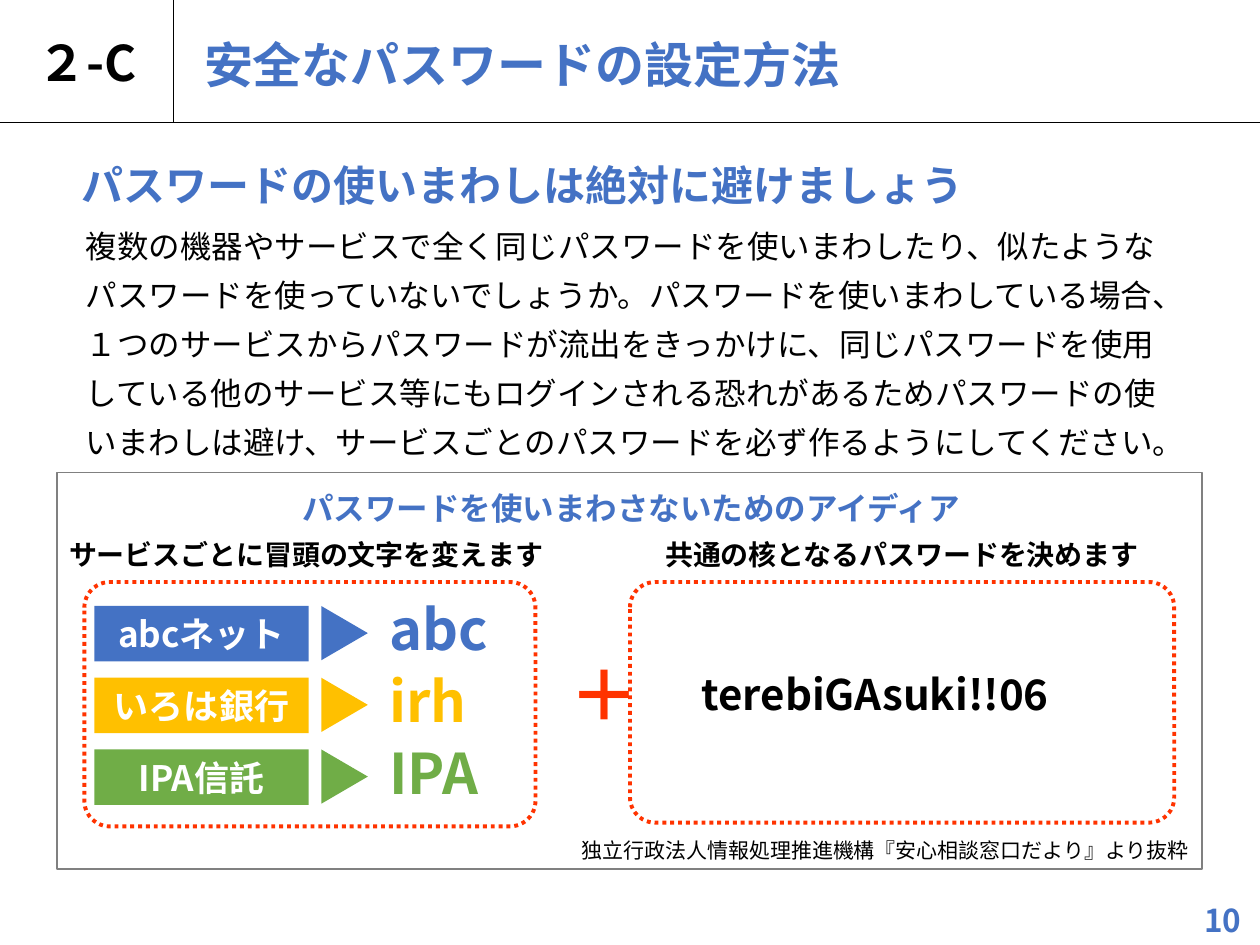
from dataclasses import dataclass

from lxml.etree import SubElement
from pptx import Presentation
from pptx.dml.color import RGBColor
from pptx.enum.dml import MSO_LINE_DASH_STYLE as Dash
from pptx.enum.shapes import MSO_CONNECTOR, MSO_SHAPE as Shape
from pptx.enum.text import MSO_ANCHOR as Anchor, MSO_AUTO_SIZE as AutoSize, PP_ALIGN as Align
from pptx.oxml.ns import qn
from pptx.util import Pt


@dataclass(frozen=True)
class Theme:
    font: str = "Noto Sans CJK JP"
    black: str = "000000"
    white: str = "FFFFFF"
    grey: str = "808080"
    blue: str = "4472C4"
    yellow: str = "FFC000"
    green: str = "70AD47"
    red: str = "FF3300"
    note: int = 12
    caption: int = 16
    body: int = 18
    label: int = 20
    heading: int = 24
    title: int = 28
    code: int = 32
    plus: int = 40


class SlideBuilder:
    def __init__(self, slide, theme):
        self.slide = slide
        self.theme = theme

    def fill_text(self, shape, text, size, color, bold=True, align=Align.LEFT,
                  anchor=Anchor.TOP, wrap=True, spacing=None):
        frame = shape.text_frame
        frame.text = text
        para = frame.paragraphs[0]
        span = para.runs[0]
        formats = {
            frame: {"word_wrap": wrap, "auto_size": AutoSize.NONE, "vertical_anchor": anchor},
            para: {"alignment": align, "line_spacing": spacing},
            span.font: {"name": self.theme.font, "size": Pt(size), "bold": bold},
        }
        for target, values in formats.items():
            for name, value in values.items():
                setattr(target, name, value)
        span.font.color.rgb = RGBColor.from_string(color)
        # The public font name covers Latin letters only; Japanese needs its own.
        SubElement(span.font._element, qn("a:ea"), typeface=self.theme.font)

    def title(self, area, text, size, color):
        holder = self.slide.shapes.title
        for name, value in zip(("left", "top", "width", "height"), area):
            setattr(holder, name, Pt(value))
        self.fill_text(holder, text, size, color, anchor=Anchor.MIDDLE)

    def text(self, area, text, size, color, **style):
        box = self.slide.shapes.add_textbox(*map(Pt, area))
        self.fill_text(box, text, size, color, **style)

    def shape(self, kind, area, fill=None, line=None, width=1, dash=None):
        shape = self.slide.shapes.add_shape(kind, *map(Pt, area))
        shape.shadow.inherit = False
        if fill:
            shape.fill.solid()
            shape.fill.fore_color.rgb = RGBColor.from_string(fill)
        else:
            shape.fill.background()
        if line:
            shape.line.color.rgb = RGBColor.from_string(line)
            shape.line.width = Pt(width)
            shape.line.dash_style = dash
        else:
            shape.line.fill.background()
        return shape

    def dotted_frame(self, area):
        frame = self.shape(Shape.ROUNDED_RECTANGLE, area, line=self.theme.red,
                           width=2.25, dash=Dash.ROUND_DOT)
        frame.adjustments[0] = 0.105

    def rule(self, start, end):
        line = self.slide.shapes.add_connector(MSO_CONNECTOR.STRAIGHT, *map(Pt, start + end))
        line.line.color.rgb = RGBColor.from_string(self.theme.black)
        line.line.width = Pt(0.5)
        SubElement(line._element.spPr, qn("a:effectLst"))

    def service_row(self, top, service, prefix, color):
        """Draw a service label, an arrowhead and the prefix it leads to."""
        theme = self.theme
        label = self.shape(Shape.RECTANGLE, (54, top, 122.4, 31.7), fill=color)
        self.fill_text(label, service, theme.label, theme.white,
                       align=Align.CENTER, anchor=Anchor.MIDDLE)
        arrow = self.shape(Shape.ISOSCELES_TRIANGLE, (181.4, top + 2.2, 31, 26.6), fill=color)
        arrow.rotation = 90
        self.text((215.5, top - 10, 85, 46), prefix, theme.code, color)


def main():
    theme = Theme()
    deck = Presentation()
    deck.slide_width, deck.slide_height = Pt(720), Pt(540)
    page = SlideBuilder(deck.slides.add_slide(deck.slide_layouts[5]), theme)

    page.rule((99.4, 69.8), (99.4, 0))
    page.rule((0, 69.8), (720, 69.8))
    page.text((0, 0, 99.4, 70.6), "２-C", theme.title, theme.black,
              align=Align.CENTER, anchor=Anchor.MIDDLE, wrap=False)
    page.title((109.4, 17.3, 597, 38.2), "安全なパスワードの設定方法", theme.title, theme.blue)

    page.text((39.6, 79.2, 620.6, 67.7), "パスワードの使いまわしは絶対に避けましょう",
              theme.heading, theme.blue, spacing=1.3)
    page.text((41.8, 119.5, 629.3, 144.7),
              "複数の機器やサービスで全く同じパスワードを使いまわしたり、似たような"
              "パスワードを使っていないでしょうか。パスワードを使いまわしている場合、"
              "１つのサービスからパスワードが流出をきっかけに、同じパスワードを使用"
              "している他のサービス等にもログインされる恐れがあるためパスワードの使"
              "いまわしは避け、サービスごとのパスワードを必ず作るようにしてください。",
              theme.body, theme.black, bold=False, spacing=1.3)

    page.shape(Shape.RECTANGLE, (32.4, 270, 654.5, 226.8), fill=theme.white, line=theme.grey)
    page.text((165.6, 275.8, 539.3, 28.8), "パスワードを使いまわさないためのアイディア",
              theme.body, theme.blue)

    page.text((32.4, 303.8, 285.8, 26.6), "サービスごとに冒頭の文字を変えます",
              theme.caption, theme.black)
    services = [
        ("abcネット", "abc", theme.blue),
        ("いろは銀行", "irh", theme.yellow),
        ("IPA信託", "IPA", theme.green),
    ]
    for index, service in enumerate(services):
        page.service_row(346.3 + 41 * index, *service)
    page.dotted_frame((48.2, 332.6, 257.8, 139.7))

    page.text((318.2, 368.6, 28.1, 55.4), "＋", theme.plus, theme.red,
              align=Align.CENTER, anchor=Anchor.MIDDLE)

    page.text((360, 303.8, 311, 26.6), "共通の核となるパスワードを決めます",
              theme.caption, theme.black, align=Align.CENTER)
    page.text((393.8, 378.7, 277.2, 36), "terebiGAsuki!!06", theme.heading, theme.black)
    page.dotted_frame((360, 332.6, 311, 137.5))

    page.text((318.2, 475.2, 368.6, 21.6),
              "独立行政法人情報処理推進機構『安心相談窓口だより』より抜粋",
              theme.note, theme.black, bold=False, align=Align.RIGHT)
    page.text((677.5, 511.2, 42.5, 28.8), "10", theme.body, theme.blue, align=Align.CENTER)

    deck.save("out.pptx")


if __name__ == "__main__":
    main()
